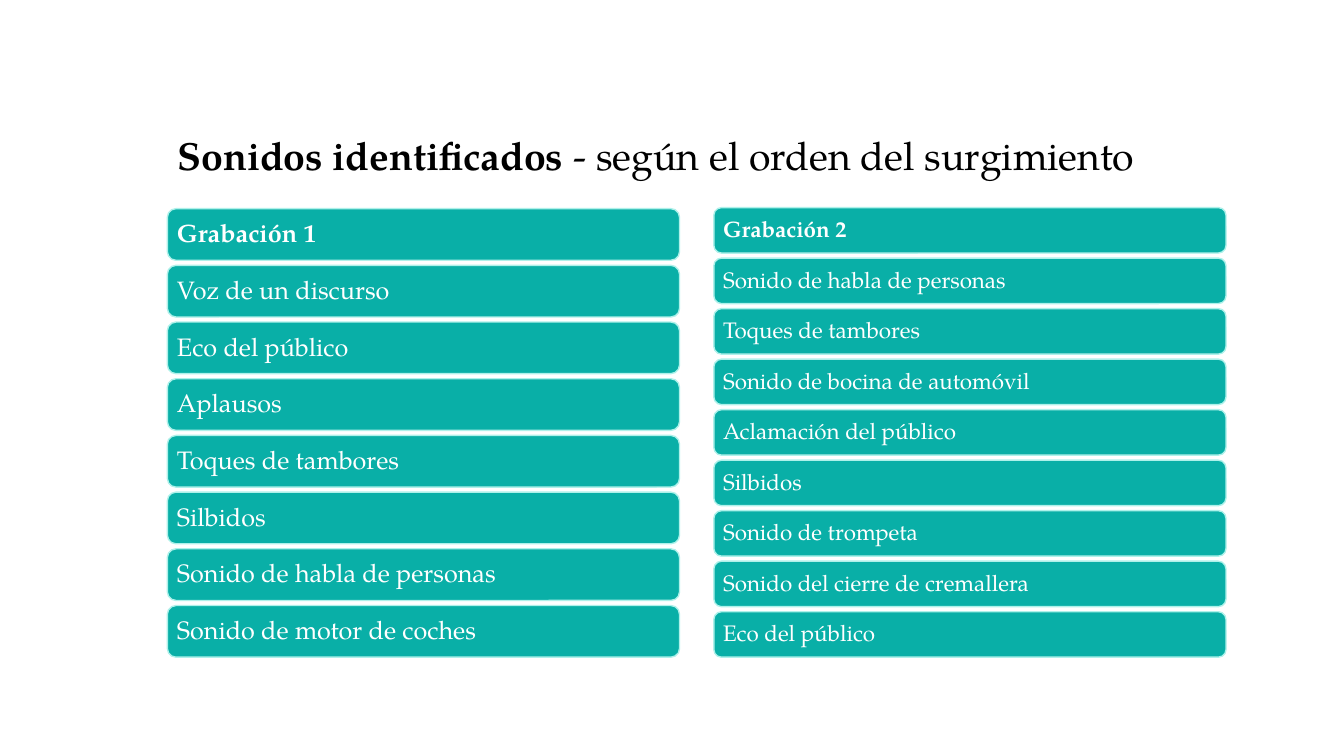
from pptx import Presentation
from pptx.dml.color import RGBColor
from pptx.enum.shapes import MSO_SHAPE
from pptx.enum.text import MSO_ANCHOR, MSO_AUTO_SIZE, PP_ALIGN
from pptx.util import Inches, Pt

ROUNDED = MSO_SHAPE.ROUNDED_RECTANGLE
MIDDLE, BOTTOM = MSO_ANCHOR.MIDDLE, MSO_ANCHOR.BOTTOM
NO_FIT = MSO_AUTO_SIZE.NONE
LEFT = PP_ALIGN.LEFT
TITLE_ONLY = 5
FONT = "TeX Gyre Pagella"
TEAL, MINT, WHITE, BLACK = "09AFA7", "AEF1EA", "FFFFFF", "000000"
BAR_GAP = 0.05
BAR_INSET = 0.07

FIRST_RECORDING = [
    "Grabación 1",
    "Voz de un discurso",
    "Eco del público",
    "Aplausos",
    "Toques de tambores",
    "Silbidos",
    "Sonido de habla de personas",
    "Sonido de motor de coches",
]
SECOND_RECORDING = [
    "Grabación 2",
    "Sonido de habla de personas",
    "Toques de tambores",
    "Sonido de bocina de automóvil",
    "Aclamación del público",
    "Silbidos",
    "Sonido de trompeta",
    "Sonido del cierre de cremallera",
    "Eco del público",
]


def color(value):
    return RGBColor.from_string(value)


def format_paragraph(para, size, text_color):
    para.alignment = LEFT
    para.line_spacing = 0.9
    para.font.name = FONT
    para.font.size = Pt(size)
    para.font.color.rgb = color(text_color)


def place_title(page, left, top, width, height):
    title = page.shapes.title
    title.left, title.top = Inches(left), Inches(top)
    title.width, title.height = Inches(width), Inches(height)
    frame = title.text_frame
    frame.word_wrap = True
    frame.auto_size = NO_FIT
    frame.vertical_anchor = BOTTOM
    para = frame.paragraphs[0]
    format_paragraph(para, 28, BLACK)
    for text, bold in (
        ("Sonidos identificados ", True),
        ("- según el orden del surgimiento", False),
    ):
        span = para.add_run()
        span.text = text
        span.font.bold = bold


def add_bar(page, left, top, width, height, text, size, bold):
    bar = page.shapes.add_shape(
        ROUNDED, Inches(left), Inches(top), Inches(width), Inches(height)
    )
    bar.shadow.inherit = False
    bar.fill.solid()
    bar.fill.fore_color.rgb = color(TEAL)
    bar.line.color.rgb = color(MINT)
    bar.line.width = Pt(1)
    frame = bar.text_frame
    frame.word_wrap = True
    frame.vertical_anchor = MIDDLE
    frame.margin_left = frame.margin_right = Inches(BAR_INSET)
    frame.margin_top = frame.margin_bottom = Inches(BAR_INSET)
    para = frame.paragraphs[0]
    para.text = text
    format_paragraph(para, size, WHITE)
    para.font.bold = bold


def add_sound_list(page, left, top, width, height, sounds, size):
    pitch = (height + BAR_GAP) / len(sounds)
    for index, sound in enumerate(sounds):
        add_bar(page, left, top + index * pitch, width, pitch - BAR_GAP,
                sound, size, index == 0)


def main():
    deck = Presentation()
    deck.slide_width, deck.slide_height = Inches(13.33), Inches(7.5)
    page = deck.slides.add_slide(deck.slide_layouts[TITLE_ONLY])
    place_title(page, 1.66, 0.58, 10.5, 1.25)
    add_sound_list(page, 1.66, 2.07, 5.08, 4.45, FIRST_RECORDING, 18)
    add_sound_list(page, 7.08, 2.06, 5.08, 4.46, SECOND_RECORDING, 16)
    deck.save("out.pptx")


if __name__ == "__main__":
    main()
